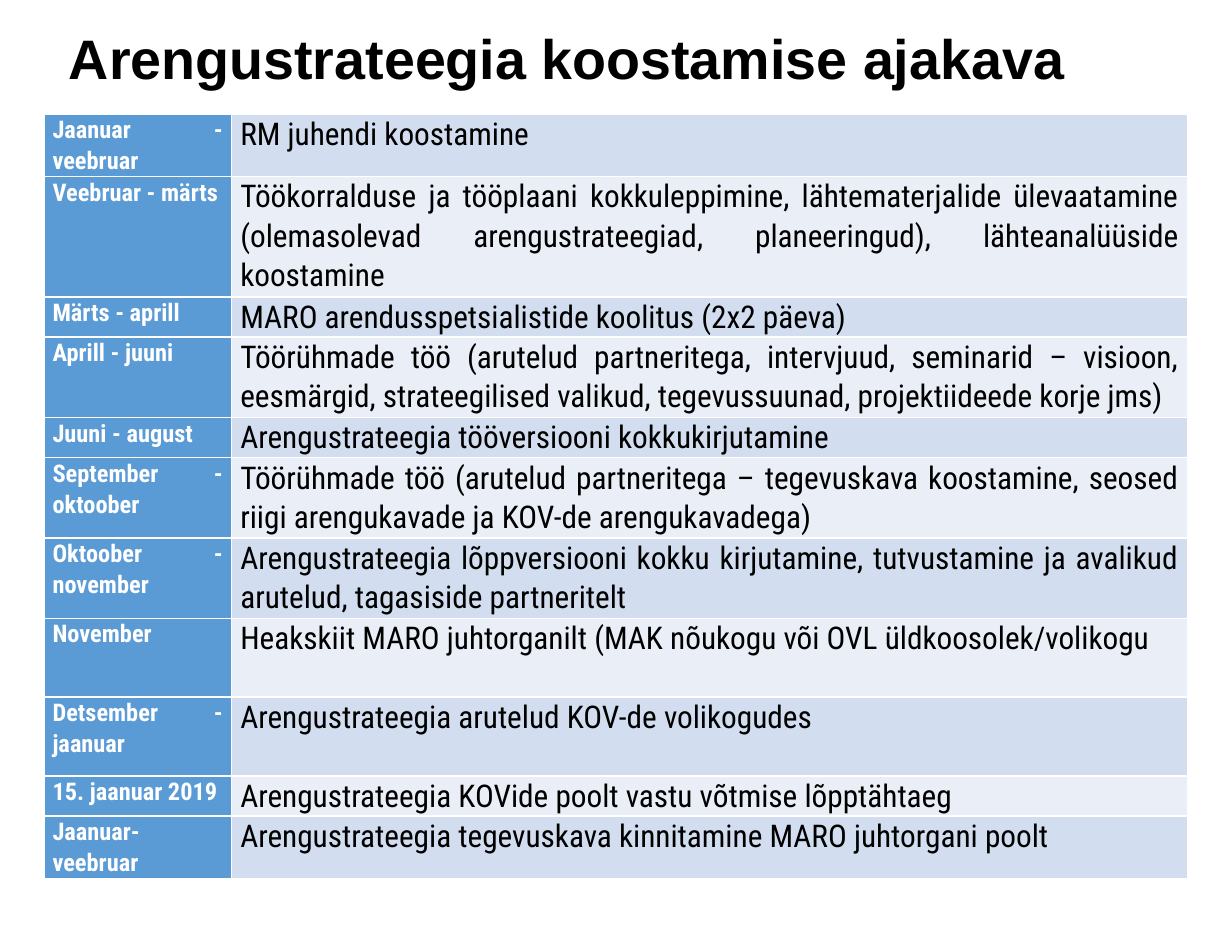
from typing import NamedTuple

from pptx import Presentation
from pptx import util as u
from pptx.dml.color import RGBColor
from pptx.enum import text

WHITE = RGBColor(0xFF, 0xFF, 0xFF)
BLACK = RGBColor(0, 0, 0)
BLUE = RGBColor(0x5B, 0x9B, 0xD5)
BANDS = (RGBColor(0xD2, 0xDE, 0xEF), RGBColor(0xEA, 0xEF, 0xF7))
CM = 2.54  # centimetres in an inch


class Look(NamedTuple):
    font: str
    size: int
    color: RGBColor
    bold: bool
    space: float
    align: text.PP_ALIGN


class Step(NamedTuple):
    time: str
    task: str
    high: float


HEAD = Look("Arial", 32, BLACK, True, 0.88, text.PP_ALIGN.LEFT)
TIME = Look("Roboto Condensed", 14, WHITE, True, 1.07, text.PP_ALIGN.JUSTIFY)
TASK = Look("Roboto Condensed", 18, BLACK, False, 1.07, text.PP_ALIGN.JUSTIFY)

STEPS = (
    Step("Jaanuar - veebruar", "RM juhendi koostamine", 0.31),
    Step("Veebruar - märts",
         "Töökorralduse ja tööplaani kokkuleppimine, lähtematerjalide ülevaatamine "
         "(olemasolevad arengustrateegiad, planeeringud), lähteanalüüside koostamine", 0.96),
    Step("Märts - aprill", "MARO arendusspetsialistide koolitus (2x2 päeva)", 0.31),
    Step("Aprill - juuni",
         "Töörühmade töö (arutelud partneritega, intervjuud, seminarid – visioon, eesmärgid, "
         "strateegilised valikud, tegevussuunad, projektiideede korje jms)", 0.56),
    Step("Juuni - august", "Arengustrateegia tööversiooni kokkukirjutamine", 0.31),
    Step("September - oktoober",
         "Töörühmade töö (arutelud partneritega – tegevuskava koostamine, seosed riigi "
         "arengukavade ja KOV-de arengukavadega)", 0.64),
    Step("Oktoober - november",
         "Arengustrateegia lõppversiooni kokku kirjutamine, tutvustamine ja avalikud arutelud, "
         "tagasiside partneritelt", 0.63),
    Step("November",
         "Heakskiit MARO juhtorganilt (MAK nõukogu või OVL üldkoosolek/volikogu", 0.63),
    Step("Detsember - jaanuar", "Arengustrateegia arutelud KOV-de volikogudes", 0.63),
    Step("15. jaanuar 2019", "Arengustrateegia KOVide poolt vastu võtmise lõpptähtaeg", 0.31),
    Step("Jaanuar-veebruar",
         "Arengustrateegia tegevuskava kinnitamine MARO juhtorgani poolt", 0.31),
)
COLS = (1.5, 7.64)


def write(frame, words: str, look: Look) -> None:
    frame.text = words
    frame.word_wrap = True
    para = frame.paragraphs[0]
    para.alignment = look.align
    para.line_spacing = look.space
    for run in para.runs:
        run.font.name = look.font
        run.font.size = u.Pt(look.size)
        run.font.bold = look.bold
        run.font.color.rgb = look.color


def draw_cell(cell, words: str, look: Look, color: RGBColor) -> None:
    write(cell.text_frame, words, look)
    cell.margin_left = cell.margin_right = u.Inches(0.07)
    cell.margin_top = cell.margin_bottom = 0
    cell.fill.solid()
    cell.fill.fore_color.rgb = color


def draw_title(slide) -> None:
    box = slide.shapes.add_textbox(u.Inches(0.55), u.Inches(0.2), u.Inches(8.82), u.Inches(0.79))
    frame = box.text_frame
    frame.margin_left = frame.margin_right = frame.margin_bottom = 0
    frame.margin_top = u.Inches(0.06)
    write(frame, "Arengustrateegia koostamise ajakava", HEAD)


def draw_plan(slide) -> None:
    wide, high = u.Inches(9.13), u.Inches(6.62)
    plan = slide.shapes.add_table(len(STEPS), len(COLS), u.Inches(0.35), u.Inches(0.91),
                                  wide, high)
    table = plan.table
    table.first_col = True
    for col, size in zip(table.columns, COLS):
        col.width = u.Inches(size)
    for i, step in enumerate(STEPS):
        table.rows[i].height = u.Inches(step.high)
        draw_cell(table.cell(i, 0), step.time, TIME, BLUE)
        draw_cell(table.cell(i, 1), step.task, TASK, BANDS[i % 2])
    plan.width, plan.height = wide, high


def main() -> None:
    deck = Presentation()
    deck.slide_width, deck.slide_height = u.Inches(25 / CM), u.Inches(19 / CM)
    slide = deck.slides.add_slide(deck.slide_layouts[6])
    # Title
    draw_title(slide)
    # Timetable
    draw_plan(slide)
    deck.save("out.pptx")


if __name__ == "__main__":
    main()
